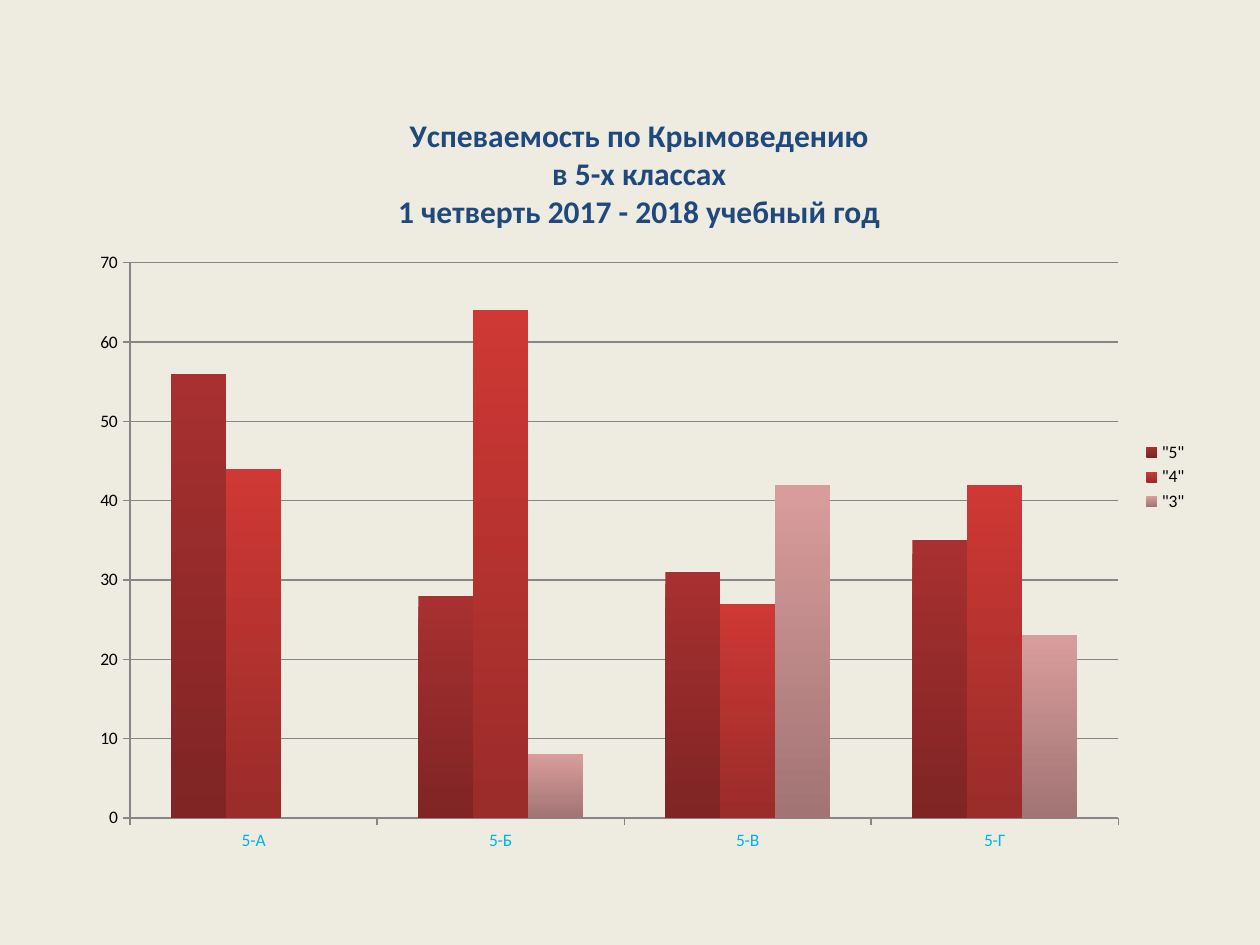
from pptx import Presentation
from pptx import util as u
from pptx.chart.data import CategoryChartData
from pptx.dml.color import RGBColor
from pptx.enum import chart as kinds

COLORS = {
    "background": "EEECE1",
    "title": "1F497D",
    "text": "000000",
    "classes": "00B0F0",
    "axis": "868686",
}
FONT = "Calibri"
TITLE = (
    "Успеваемость по Крымоведению",
    "в 5-х классах",
    "1 четверть 2017 - 2018 учебный год",
)
CLASSES = ("5-А", "5-Б", "5-В", "5-Г")
GRADES = {
    '"5"': ((56, 28, 31, 35), ("A83030", "802424")),
    '"4"': ((44, 64, 27, 42), ("CF3834", "9A2C2A")),
    '"3"': ((None, 8, 42, 23), ("D99C9C", "A27474")),
}


def set_font(font, size, color, bold=False):
    """Apply the slide typeface with a size, colour and weight."""
    font.name = FONT
    font.size = u.Pt(size)
    font.bold = bold
    font.color.rgb = RGBColor.from_string(color)


def set_line(line):
    """Draw an axis or grid line in thin grey."""
    line.color.rgb = RGBColor.from_string(COLORS["axis"])
    line.width = u.Pt(0.75)


def style_title(chart):
    """Write the chart title, one paragraph per line."""
    chart.has_title = True
    chart.chart_title.include_in_layout = False
    frame = chart.chart_title.text_frame
    frame.text = "\n".join(TITLE)
    for paragraph in frame.paragraphs:
        set_font(paragraph.font, 18, COLORS["title"], bold=True)


def style_axes(chart):
    """Set the scale, grid and labels of both axes."""
    values = chart.value_axis
    values.minimum_scale, values.maximum_scale, values.major_unit = 0, 70, 10
    values.has_major_gridlines = True
    set_line(values.major_gridlines.format.line)
    for axis, color in ((values, "text"), (chart.category_axis, "classes")):
        axis.major_tick_mark = kinds.XL_TICK_MARK.OUTSIDE
        set_line(axis.format.line)
        set_font(axis.tick_labels.font, 10, COLORS[color])


def style_columns(chart):
    """Shade each grade's columns from top to bottom."""
    plot = chart.plots[0]
    plot.gap_width = 150
    plot.overlap = 0
    plot.vary_by_categories = False
    for series, (_, shades) in zip(plot.series, GRADES.values()):
        fill = series.format.fill
        fill.gradient()
        fill.gradient_angle = 270
        for stop, shade, position in zip(fill.gradient_stops, shades, (0, 1)):
            stop.color.rgb = RGBColor.from_string(shade)
            stop.position = position


def add_grades_chart(page, left, top, width, height):
    """Place the column chart of grades by class in the given box."""
    data = CategoryChartData()
    data.categories = CLASSES
    for grade, (shares, _) in GRADES.items():
        data.add_series(grade, shares)
    chart = page.shapes.add_chart(
        kinds.XL_CHART_TYPE.COLUMN_CLUSTERED, left, top, width, height, data
    ).chart
    set_font(chart.font, 10, COLORS["text"])
    style_title(chart)
    style_axes(chart)
    style_columns(chart)
    chart.has_legend = True
    chart.legend.position = kinds.XL_LEGEND_POSITION.RIGHT
    chart.legend.include_in_layout = False
    set_font(chart.legend.font, 10, COLORS["text"])


def main():
    """Build and save the one-slide deck."""
    deck = Presentation()
    deck.slide_width, deck.slide_height = u.Cm(25.4), u.Cm(19.05)
    page = deck.slides.add_slide(deck.slide_layouts[6])
    page.background.fill.solid()
    page.background.fill.fore_color.rgb = RGBColor.from_string(COLORS["background"])
    add_grades_chart(page, u.Cm(1.57), u.Cm(1.78), u.Cm(22.63), u.Cm(15.67))
    deck.save("out.pptx")


if __name__ == "__main__":
    main()
